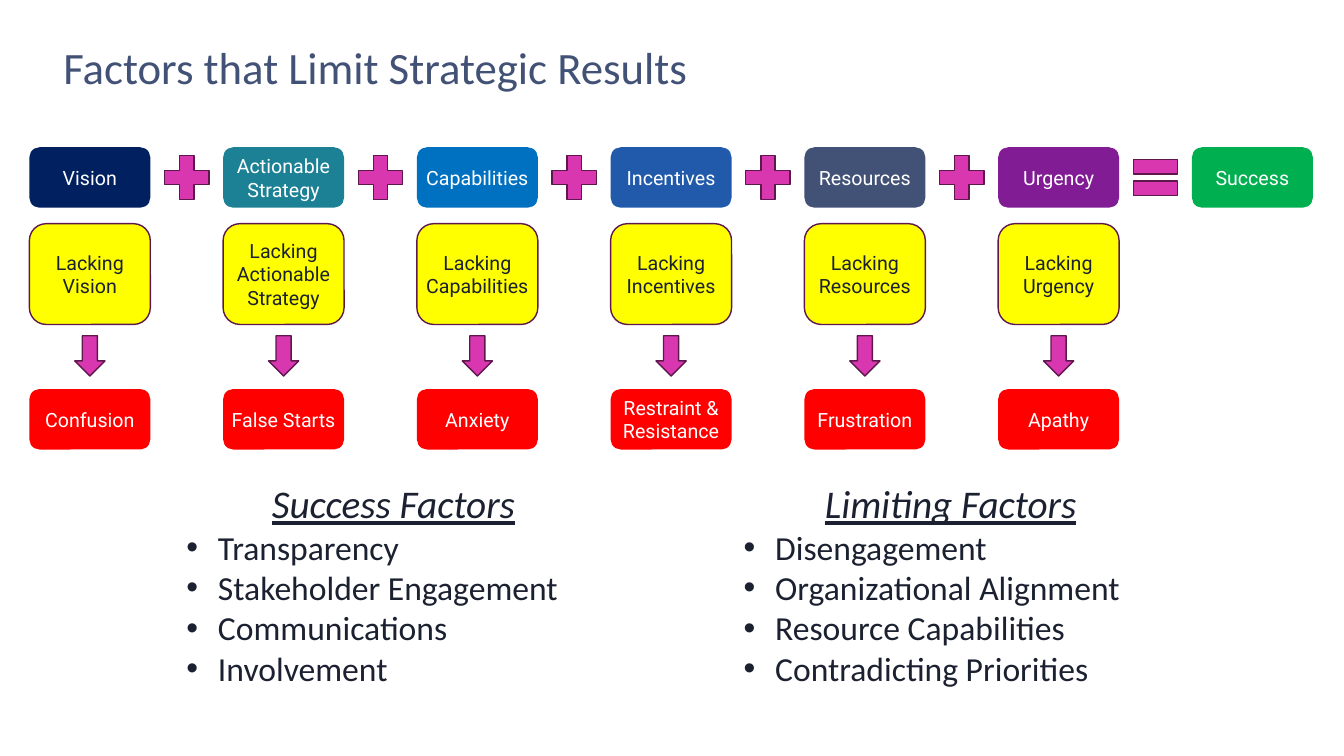
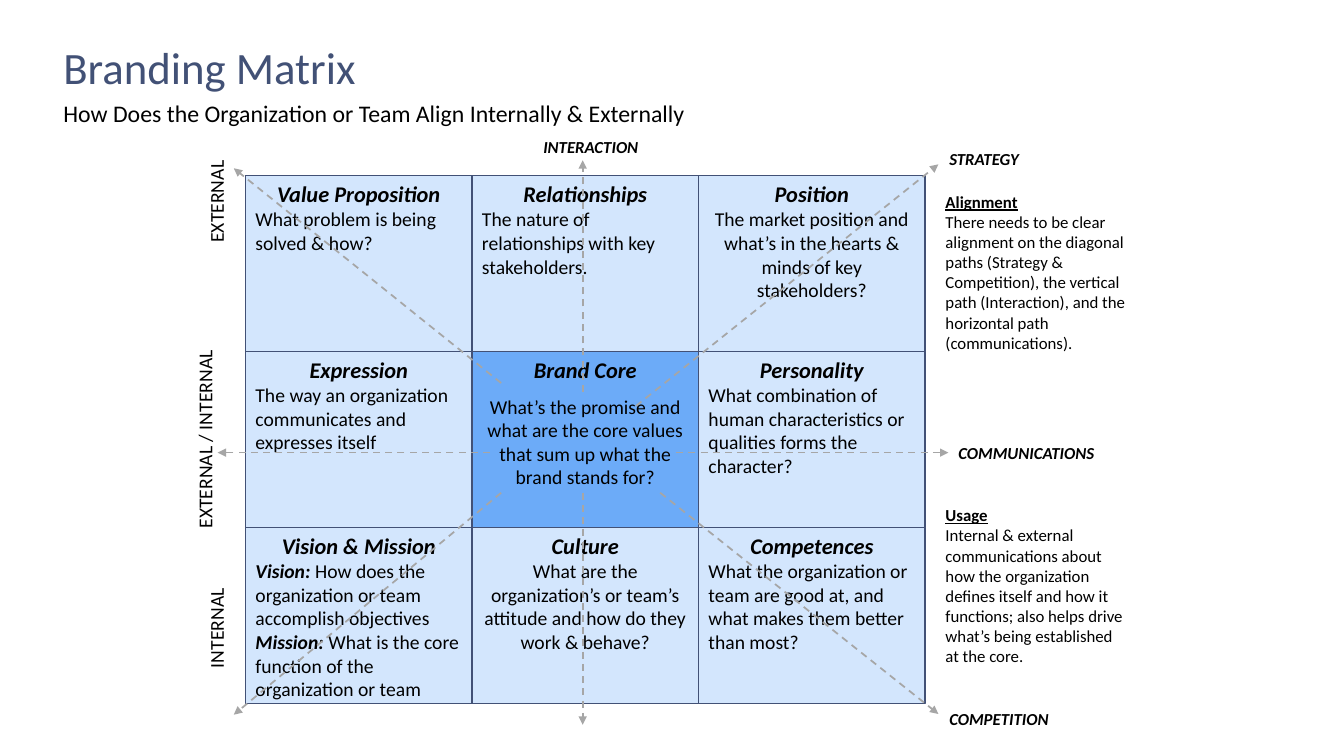
from dataclasses import dataclass

from lxml import etree
from pptx import Presentation
from pptx.dml.color import RGBColor
from pptx.enum.dml import MSO_LINE
from pptx.enum.shapes import MSO_CONNECTOR, MSO_SHAPE as SHAPE
from pptx.enum.text import MSO_ANCHOR as ANCHOR, MSO_AUTO_SIZE, PP_ALIGN as ALIGN
from pptx.oxml.ns import qn
from pptx.util import Pt

# Shared colours
NAVY, INK, BLACK, WHITE = "425176", "1B2130", "000000", "FFFFFF"
PINK, PLUM, YELLOW, RED = "D937B0", "5F184D", "FFFF00", "FF0000"
PALE, BLUE, GREY = "D3E6FD", "6CABF8", "A6A6A6"

# Layouts of the default template
TITLE_AND_BODY, TWO_LISTS = 1, 3


def rgb(value):
    return RGBColor.from_string(value)


@dataclass
class Line:
    """One paragraph; lead is a bold italic opening run."""
    text: str
    size: float = 14
    color: str = BLACK
    font: str = "Calibri"
    align: ALIGN = ALIGN.LEFT
    bold: bool = False
    italic: bool = False
    underline: bool = False
    bullet: bool = False
    before: float = 0
    spacing: float = 1
    lead: str = ""


class Deck:
    def __init__(self):
        self.prs = Presentation()
        self.prs.slide_width, self.prs.slide_height = Pt(960), Pt(540)
        self.s = None

    def slide(self, layout, title):
        self.s = self.prs.slides.add_slide(self.prs.slide_layouts[layout])
        self.body(0, 38, 23, 883, 47.5, [Line(title, 32, NAVY)], ANCHOR.BOTTOM)

    def body(self, idx, x, y, w, h, lines, anchor=ANCHOR.TOP):
        """Move and fill a placeholder."""
        sp = self.s.placeholders[idx]
        sp.left, sp.top, sp.width, sp.height = Pt(x), Pt(y), Pt(w), Pt(h)
        self.set_lines(sp.text_frame, lines, anchor)

    def text(self, x, y, w, h, lines, wrap=True, rotation=0):
        sp = self.s.shapes.add_textbox(Pt(x), Pt(y), Pt(w), Pt(h))
        sp.rotation = rotation
        self.set_lines(sp.text_frame, lines, wrap=wrap)

    def shape(self, kind, x, y, w, h, fill, line=None):
        sp = self.s.shapes.add_shape(kind, Pt(x), Pt(y), Pt(w), Pt(h))
        sp.shadow.inherit = False
        sp.fill.solid()
        sp.fill.fore_color.rgb = rgb(fill)
        if line:
            sp.line.color.rgb = rgb(line)
            sp.line.width = Pt(1)
        else:
            sp.line.fill.background()
        return sp

    def box(self, x, y, w, h, text, fill, color=WHITE, line=None):
        """Rounded box with a centred label."""
        sp = self.shape(SHAPE.ROUNDED_RECTANGLE, x, y, w, h, fill, line)
        tf = sp.text_frame
        tf.margin_left = tf.margin_right = 0
        self.set_lines(tf, [Line(t, 14, color, "Roboto", ALIGN.CENTER)
                            for t in text.split("\n")], ANCHOR.MIDDLE)

    def arrow(self, x1, y1, x2, y2):
        """Dashed line with a triangle at its far end."""
        c = self.s.shapes.add_connector(
            MSO_CONNECTOR.STRAIGHT, Pt(x1), Pt(y1), Pt(x2), Pt(y2))
        c.line.color.rgb = rgb(GREY)
        c.line.width = Pt(1.25)
        c.line.dash_style = MSO_LINE.DASH
        spPr = c._element.spPr
        etree.SubElement(spPr.find(qn("a:ln")), qn("a:tailEnd"), type="triangle")
        etree.SubElement(spPr, qn("a:effectLst"))

    def set_lines(self, tf, lines, anchor=ANCHOR.TOP, wrap=True):
        tf.word_wrap = wrap
        tf.auto_size = MSO_AUTO_SIZE.NONE
        tf.vertical_anchor = anchor
        for i, line in enumerate(lines):
            p = tf.add_paragraph() if i else tf.paragraphs[0]
            self.mark(p, line.bullet)
            p.alignment = line.align
            p.space_before = Pt(line.before)
            p.line_spacing = line.spacing
            p.text = line.lead or line.text
            if line.lead:
                p.add_run().text = line.text
            for k, r in enumerate(p.runs):
                lead = bool(line.lead) and k == 0
                f = r.font
                f.name, f.size, f.color.rgb = line.font, Pt(line.size), rgb(line.color)
                f.bold, f.italic = line.bold or lead, line.italic or lead
                f.underline = line.underline

    def mark(self, p, bullet):
        """Bullet with a hanging indent, or none."""
        pPr = p._p.get_or_add_pPr()
        indent = Pt(22.5) if bullet else 0
        pPr.set("marL", str(indent))
        pPr.set("indent", str(-indent))
        if bullet:
            etree.SubElement(pPr, qn("a:buFont"), typeface="Arial")
            etree.SubElement(pPr, qn("a:buChar"), char="•")
        else:
            etree.SubElement(pPr, qn("a:buNone"))


def factors_slide(deck):
    deck.slide(TWO_LISTS, "Factors that Limit Strategic Results")
    left, step, w, h = 21, 138.4, 86.4, 43.2
    top, lacking_top, arrow_top, result_top = 105.2, 159.8, 239.8, 277.9

    # Factor, colour and what its lack leads to
    factors = [
        ("Vision", "002060", "Confusion"),
        ("Actionable\nStrategy", "1C8195", "False Starts"),
        ("Capabilities", "0070C0", "Anxiety"),
        ("Incentives", "215AAB", "Restraint & Resistance"),
        ("Resources", NAVY, "Frustration"),
        ("Urgency", "811C95", "Apathy"),
    ]
    for i, (factor, color, result) in enumerate(factors):
        x = left + i * step
        last = i == len(factors) - 1
        deck.box(x, top, w, h, factor, color)
        deck.shape(SHAPE.MATH_EQUAL if last else SHAPE.MATH_PLUS,
                   x + (w + step - h) / 2, top, h, h, PINK, PLUM)
        deck.box(x, lacking_top, w, 72, "Lacking " + factor.replace("\n", " "),
                 YELLOW, INK, PLUM)
        deck.shape(SHAPE.DOWN_ARROW, x + (w - 21.6) / 2, arrow_top, 21.6, 28.8,
                   PINK, PLUM)
        deck.box(x, result_top, w, h, result, RED)
    deck.box(left + len(factors) * step, top, w, h, "Success", "00B050")

    # Lists
    lists = [
        (126, "Success Factors", ["Transparency", "Stakeholder Engagement",
                                  "Communications", "Involvement"]),
        (524, "Limiting Factors", ["Disengagement", "Organizational Alignment",
                                   "Resource Capabilities",
                                   "Contradicting Priorities"]),
    ]
    for idx, (x, heading, items) in enumerate(lists, 1):
        lines = [Line(heading, 28, INK, align=ALIGN.CENTER, italic=True, underline=True)]
        lines += [Line(item, 24, INK, bullet=True) for item in items]
        deck.body(idx, x, 339, 310, 158.4, lines)


def matrix_slide(deck):
    deck.slide(TITLE_AND_BODY, "Branding Matrix")
    deck.body(1, 38, 65, 883, 29.5, [Line(
        "How Does the Organization or Team Align Internally & Externally",
        17, spacing=1.1)])

    # Matrix, row by row
    mid = ALIGN.CENTER
    matrix = [
        [("Value Proposition", Line("What problem is being solved & how?")),
         ("Relationships", Line("The nature of relationships with key stakeholders.")),
         ("Position", Line("The market position and what’s in the hearts & minds "
                           "of key stakeholders?", align=mid))],
        [("Expression", Line("The way an organization communicates and "
                             "expresses itself")),
         ("Brand Core", Line("What’s the promise and what are the core values that "
                             "sum up what the brand stands for?", align=mid, before=8)),
         ("Personality", Line("What combination of human characteristics or "
                              "qualities forms the character?"))],
        [("Vision & Mission",
          Line("How does the organization or team accomplish objectives",
               lead="Vision: "),
          Line("What is the core function of the organization or team",
               lead="Mission: ")),
         ("Culture", Line("What are the organization’s or team’s attitude and how "
                          "do they work & behave?", align=mid)),
         ("Competences", Line("What the organization or team are good at, and what "
                              "makes them better than most?"))],
    ]
    w, h = 161.8, 125.7
    for row, cells in enumerate(matrix):
        for col, (heading, *lines) in enumerate(cells):
            fill = BLUE if row == col == 1 else PALE
            sp = deck.shape(SHAPE.RECTANGLE, 175.4 + col * w, 125.4 + row * h,
                            w, h, fill, NAVY)
            title = Line(heading, 16, align=mid, bold=True, italic=True)
            deck.set_lines(sp.text_frame, [title, *lines])

    # Row labels
    for label, x, y, width in [("EXTERNAL", 110, 133.2, 86.4),
                               ("EXTERNAL / INTERNAL", 73, 303, 144),
                               ("INTERNAL", 110, 437.8, 86.4)]:
        deck.text(x, y, width, 21.6, [Line(label, align=mid)], rotation=270)

    # Arrows from the core outwards
    cx, cy = 416.2, 323.3
    for ends in [(358, 352, 167, 510.5), (454.3, 290, 670.3, 117.4),
                 (358, 273.6, 167, 120.2), (471.6, 352, 670.3, 510),
                 (350, cy, 155.5, cy), (483, cy, 677.5, cy),
                 (cx, 280, cx, 114.5), (cx, 352, cx, 517.7)]:
        deck.arrow(*ends)

    # Path labels
    for label, x, y, width in [("STRATEGY", 671, 103, 65),
                               ("COMPETITION", 671, 502.6, 87),
                               ("INTERACTION", 381, 94.3, 83.5),
                               ("COMMUNICATIONS", 677.5, 312.5, 114)]:
        deck.text(x, y, width, 21.6,
                  [Line(label, 12, bold=True, italic=True)], wrap=False)

    # Side notes
    for heading, note, y, height in [
            ("Alignment", "There needs to be clear alignment on the diagonal paths "
             "(Strategy & Competition), the vertical path (Interaction), and the "
             "horizontal path (communications).", 133.2, 130),
            ("Usage", "Internal & external communications about how the organization "
             "defines itself and how it functions; also helps drive what’s being "
             "established at the core.", 357.2, 122.4)]:
        deck.text(668.3, y, 144, height,
                  [Line(heading, 12, bold=True, underline=True), Line(note, 12)])


def main():
    deck = Deck()
    factors_slide(deck)
    matrix_slide(deck)
    deck.prs.save("out.pptx")


if __name__ == "__main__":
    main()
